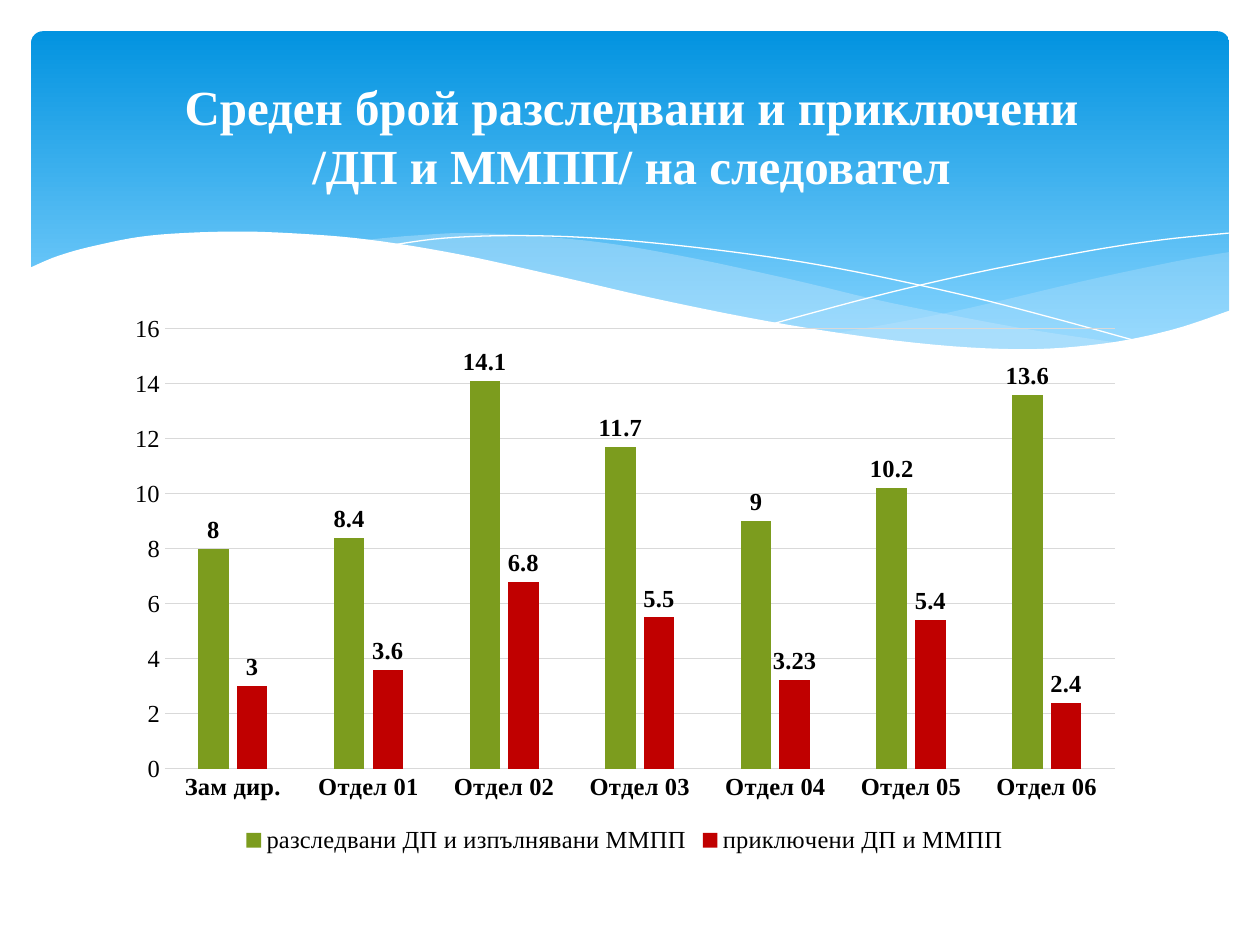
from lxml import etree
from pptx import Presentation
from pptx.chart.data import CategoryChartData
from pptx.dml.color import RGBColor
from pptx.enum.chart import XL_CHART_TYPE, XL_LABEL_POSITION, XL_LEGEND_POSITION, XL_TICK_MARK
from pptx.enum.shapes import MSO_SHAPE
from pptx.enum.text import MSO_ANCHOR, PP_ALIGN
from pptx.oxml.ns import qn
from pptx.util import Cm, Pt

COLUMNS = XL_CHART_TYPE.COLUMN_CLUSTERED
OUTSIDE_END = XL_LABEL_POSITION.OUTSIDE_END
LEGEND_BOTTOM = XL_LEGEND_POSITION.BOTTOM
NO_TICK = XL_TICK_MARK.NONE
ROUNDED = MSO_SHAPE.ROUNDED_RECTANGLE
MIDDLE = MSO_ANCHOR.MIDDLE
CENTER = PP_ALIGN.CENTER

# Content
FONT = "Times New Roman"
COLORS = {"panel_top": "0293E0", "panel_bottom": "83D3FE", "tint": "C6E7FC",
          "white": "FFFFFF", "black": "000000", "grid": "D9D9D9",
          "green": "7C9C1E", "red": "C00000"}
TITLE = "Среден брой разследвани и приключени\v/ДП и ММПП/ на следовател"
CATEGORIES = ["Зам дир.", "Отдел 01", "Отдел 02", "Отдел 03",
              "Отдел 04", "Отдел 05", "Отдел 06"]
SERIES = [
    ("разследвани ДП и изпълнявани ММПП", "green", [8, 8.4, 14.1, 11.7, 9, 10.2, 13.6]),
    ("приключени ДП и ММПП", "red", [3, 3.6, 6.8, 5.5, 3.23, 5.4, 2.4]),
]

# Waves in cm: curves to smooth, fill colour (None for a white line), opacity in percent
WAVES = [
    ([[(24.79, 5.08), (23.75, 5.26), (21.87, 5.66), (19.13, 6.3), (16.79, 6.73)],
      [(16.79, 6.73), (18.59, 6.96), (20.4, 7.06), (22.15, 6.96), (23.57, 6.68),
       (24.79, 6.27)]], "tint", 29),
    ([[(22.68, 6.93), (20.5, 6.6), (17.93, 6.1), (15.98, 5.64), (13.74, 5.16),
       (11.81, 4.85), (9.65, 4.7), (8.33, 4.75), (7.26, 4.85)],
      [(7.26, 4.85), (9.19, 5.16), (11.4, 5.64), (14.38, 6.3), (16.51, 6.71),
       (18.34, 6.96), (20.22, 7.06), (21.54, 7.04), (22.68, 6.93)]], "tint", 40),
    ([[(7.85, 4.95), (8.97, 4.8), (10.57, 4.75), (12.42, 4.83), (14.78, 5.08),
       (16.89, 5.41), (19.3, 5.92), (21.11, 6.38), (23.04, 6.91)]], None, 100),
    ([[(15.57, 6.53), (17.65, 5.97), (19.71, 5.49), (22, 5.05), (23.47, 4.83),
       (24.77, 4.7)]], None, 100),
    ([[(24.82, 6.25), (23.62, 6.65), (22.22, 6.93), (20.55, 7.04), (18.44, 6.91),
       (15.9, 6.55), (13.44, 6.07), (11.35, 5.59), (9.27, 5.13), (7.42, 4.83),
       (5.84, 4.7), (4.5, 4.67), (3.02, 4.75), (1.93, 4.95), (1.17, 5.16), (0.58, 5.41)],
      [(0.58, 8.36), (24.82, 8.36)]], "white", 100),
]
STEPS = 6


def color(name):
    return RGBColor.from_string(COLORS[name])


def smooth_curve(knots):
    """Catmull-Rom curve through the knots."""
    if len(knots) < 3:
        return knots
    padded = [knots[0], *knots, knots[-1]]
    points = [knots[0]]
    for a, b, c, d in zip(padded, padded[1:], padded[2:], padded[3:]):
        for step in range(1, STEPS + 1):
            t = step / STEPS
            points.append(tuple(
                (2 * q + (r - p) * t + (2 * p - 5 * q + 4 * r - s) * t ** 2
                 + (3 * q - p - 3 * r + s) * t ** 3) / 2
                for p, q, r, s in zip(a, b, c, d)))
    return points


def add_wave(slide, curves, fill, opacity):
    points = [(Cm(x), Cm(y)) for curve in curves for x, y in smooth_curve(curve)]
    builder = slide.shapes.build_freeform(*points[0])
    builder.add_line_segments(points[1:], close=fill is not None)
    wave = builder.convert_to_shape()
    wave.shadow.inherit = False
    if fill is None:
        wave.fill.background()
        wave.line.color.rgb = color("white")
        wave.line.width = Pt(0)
        return
    wave.line.fill.background()
    wave.fill.solid()
    wave.fill.fore_color.rgb = color(fill)
    if opacity < 100:
        tone = wave.fill._xPr.find(qn("a:solidFill"))[0]
        etree.SubElement(tone, qn("a:alpha"), val=str(opacity * 1000))


def add_panel(slide):
    panel = slide.shapes.add_shape(ROUNDED, Cm(0.63), Cm(0.63), Cm(24.15), Cm(6.86))
    panel.adjustments[0] = 0.034
    panel.shadow.inherit = False
    panel.line.fill.background()
    panel.fill.gradient()
    panel.fill.gradient_angle = 270
    stops = panel.fill.gradient_stops
    for stop, position, name in zip(stops, (0, 0.9), ("panel_top", "panel_bottom")):
        stop.position = position
        stop.color.rgb = color(name)


def add_title(slide):
    box = slide.shapes.add_textbox(Cm(1.3), Cm(0.74), Cm(22.86), Cm(3.99))
    frame = box.text_frame
    frame.word_wrap = True
    frame.vertical_anchor = MIDDLE
    para = frame.paragraphs[0]
    para.text = TITLE
    para.alignment = CENTER
    para.font.name = FONT
    para.font.size = Pt(28)
    para.font.bold = True
    para.font.color.rgb = color("white")


def style_font(font, bold=False):
    font.name = FONT
    font.size = Pt(14)
    font.bold = bold
    font.color.rgb = color("black")


def add_averages_chart(slide):
    data = CategoryChartData()
    data.categories = CATEGORIES
    for name, _, values in SERIES:
        data.add_series(name, values)
    chart = slide.shapes.add_chart(
        COLUMNS, Cm(2.31), Cm(6.12), Cm(20.57), Cm(11.2), data).chart
    style_font(chart.font)
    chart.has_title = False
    chart.has_legend = True
    chart.legend.position = LEGEND_BOTTOM
    chart.legend.include_in_layout = False
    style_font(chart.legend.font)

    # Axes
    category_axis, value_axis = chart.category_axis, chart.value_axis
    for axis in (category_axis, value_axis):
        axis.major_tick_mark = axis.minor_tick_mark = NO_TICK
        style_font(axis.tick_labels.font, bold=axis is category_axis)
    value_axis.minimum_scale, value_axis.maximum_scale = 0, 16
    value_axis.major_unit = 2
    value_axis.has_major_gridlines = True
    value_axis.format.line.fill.background()
    for line in (category_axis.format.line, value_axis.major_gridlines.format.line):
        line.color.rgb = color("grid")
        line.width = Pt(0.75)

    # Columns and their labels
    plot = chart.plots[0]
    plot.gap_width = 219
    plot.overlap = -27
    plot.vary_by_categories = False
    for series, (_, fill, _) in zip(plot.series, SERIES):
        series.format.fill.solid()
        series.format.fill.fore_color.rgb = color(fill)
        labels = series.data_labels
        labels.show_value = True
        labels.position = OUTSIDE_END
        style_font(labels.font, bold=True)


def main():
    deck = Presentation()
    deck.slide_width, deck.slide_height = Cm(25.4), Cm(19.05)
    slide = deck.slides.add_slide(deck.slide_layouts[6])
    add_panel(slide)
    for wave in WAVES:
        add_wave(slide, *wave)
    add_title(slide)
    add_averages_chart(slide)
    deck.save("out.pptx")


if __name__ == "__main__":
    main()
